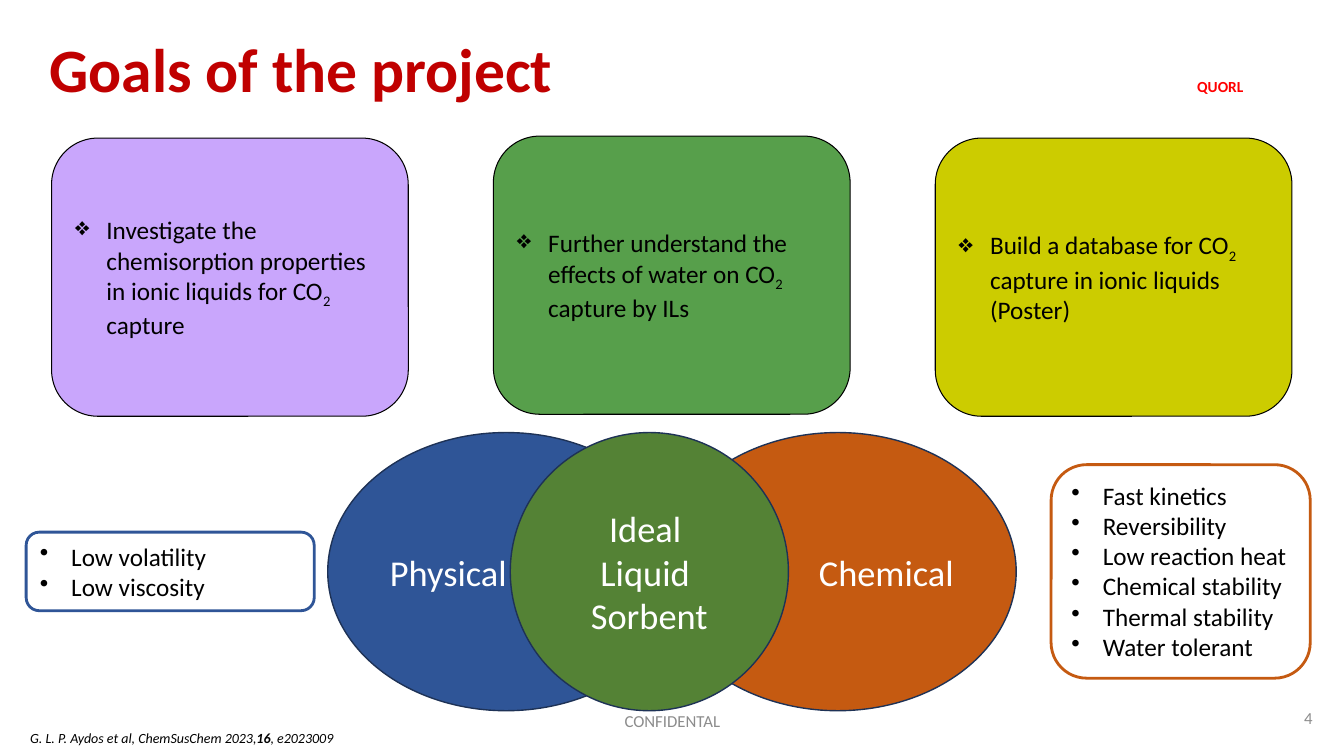
from dataclasses import dataclass

import lxml.etree
import pptx
import pptx.dml.color
import pptx.enum.shapes
import pptx.enum.text
import pptx.oxml.ns
import pptx.util

Cm = pptx.util.Cm
SHAPE = pptx.enum.shapes.MSO_SHAPE
ALIGN = pptx.enum.text.PP_ALIGN
ANCHOR = pptx.enum.text.MSO_ANCHOR


@dataclass(frozen=True)
class Theme:
    font: str = "Calibri"
    black: str = "000000"
    white: str = "FFFFFF"
    grey: str = "8C8C8C"
    title_red: str = "C00000"
    tag_red: str = "FF0000"
    blue: str = "2F5597"
    orange: str = "C55A11"
    green: str = "548235"
    navy: str = "1E3256"
    cards: tuple = ("C9A6FC", "579F4B", "CCCC00")
    title_size: int = 44
    venn_size: int = 26
    body_size: int = 18
    footer_size: int = 12
    tag_size: int = 11
    citation_size: int = 10


THEME = Theme()

GOALS = [
    ("Investigate the chemisorption properties in ionic liquids for CO", "capture"),
    ("Further understand the effects of water on CO", "capture by ILs"),
    ("Build a database for CO", "capture in ionic liquids (Poster)"),
]
PHYSICAL_TRAITS = ["Low volatility", "Low viscosity"]
CHEMICAL_TRAITS = ["Fast kinetics", "Reversibility", "Low reaction heat",
                   "Chemical stability", "Thermal stability", "Water tolerant"]


def rgb(code):
    return pptx.dml.color.RGBColor.from_string(code)


def style(para, size, color, align=ALIGN.LEFT, bold=False, italic=False):
    para.alignment = align
    para.font.name = THEME.font
    para.font.size = pptx.util.Pt(size)
    para.font.bold = bold
    para.font.italic = italic
    para.font.color.rgb = rgb(color)


def add_bullet(para, symbol):
    props = para._p.get_or_add_pPr()
    props.set("marL", str(Cm(0.79)))
    props.set("indent", str(Cm(-0.79)))
    bullet = lxml.etree.SubElement(props, pptx.oxml.ns.qn("a:buChar"))
    bullet.set("char", symbol)


def add_paragraphs(frame, lines):
    """Write each line in its own paragraph and return the paragraphs."""
    frame.text = "\n".join(lines)
    return frame.paragraphs


def add_panel(page, kind, box, line, width, fill=None, anchor=ANCHOR.MIDDLE):
    shape = page.shapes.add_shape(kind, *map(Cm, box))
    shape.shadow.inherit = False
    if fill:
        shape.fill.solid()
        shape.fill.fore_color.rgb = rgb(fill)
    else:
        shape.fill.background()
    shape.line.color.rgb = rgb(line)
    shape.line.width = pptx.util.Pt(width)
    shape.text_frame.word_wrap = True
    shape.text_frame.vertical_anchor = anchor
    return shape.text_frame


def add_label(page, box, text, size, color, anchor=ANCHOR.TOP, **look):
    frame = page.shapes.add_textbox(*map(Cm, box)).text_frame
    frame.word_wrap = True
    frame.vertical_anchor = anchor
    para = frame.paragraphs[0]
    para.text = text
    style(para, size, color, **look)
    return para


def add_title(page, box):
    title = page.shapes.title
    title.left, title.top, title.width, title.height = map(Cm, box)
    frame = title.text_frame
    frame.text = "Goals of the project"
    frame.auto_size = pptx.enum.text.MSO_AUTO_SIZE.NONE
    frame.vertical_anchor = ANCHOR.MIDDLE
    para = frame.paragraphs[0]
    para.line_spacing = 0.9
    style(para, THEME.title_size, THEME.title_red, bold=True)


def add_goal_cards(page, box):
    left, top, width, height = box
    card_width = 8.99
    pitch = (width - card_width) / (len(GOALS) - 1)
    for index, ((before, after), fill) in enumerate(zip(GOALS, THEME.cards)):
        rise = 0.05 if index == 1 else 0
        card = (left + index * pitch, top - rise, card_width, height)
        frame = add_panel(page, SHAPE.ROUNDED_RECTANGLE, card, THEME.black, 0.75, fill)
        para = frame.paragraphs[0]
        add_bullet(para, "❖")
        style(para, THEME.body_size, THEME.black)
        for text in (before, "2 ", after):
            span = para.add_run()
            span.text = text
            if text == "2 ":
                span._r.get_or_add_rPr().set("baseline", "-25000")


def add_venn(page, box):
    left, top, width, height = box
    oval = 8.99
    # Back to front: the two sides, then the circle over their overlap
    parts = [
        (left + width - oval, oval, THEME.orange, ["Chemical"], ALIGN.RIGHT),
        (left, oval, THEME.blue, ["Physical"], ALIGN.LEFT),
        (left + 4.6, height, THEME.green, ["Ideal ", "Liquid ", "Sorbent"], ALIGN.CENTER),
    ]
    for x, part_width, fill, lines, align in parts:
        frame = add_panel(page, SHAPE.OVAL, (x, top, part_width, height),
                          THEME.navy, 1, fill)
        for para in add_paragraphs(frame, lines):
            style(para, THEME.venn_size, THEME.white, align)


def add_trait_list(page, box, line, traits):
    frame = add_panel(page, SHAPE.ROUNDED_RECTANGLE, box, line, 2, anchor=ANCHOR.TOP)
    for para in add_paragraphs(frame, traits):
        add_bullet(para, "•")
        style(para, THEME.body_size, THEME.black)


def add_footer(page, box):
    left, top, width, height = box
    add_label(page, (left + 10.72, top + 0.07, 11.43, 1.02), "CONFIDENTAL",
              THEME.footer_size, THEME.grey, ANCHOR.MIDDLE, align=ALIGN.CENTER)
    add_label(page, (left + width - 1.3, top, 1.3, 1.02), "4",
              THEME.footer_size, THEME.grey, ANCHOR.MIDDLE, align=ALIGN.RIGHT)
    citation = add_label(page, (left, top + height - 0.71, 32, 0.71),
                         "G. L. P. Aydos et al, ChemSusChem 2023,",
                         THEME.citation_size, THEME.black, italic=True)
    volume = citation.add_run()
    volume.text = "16"
    volume.font.bold = True
    citation.add_run().text = ", e2023009"


def build_goals_page(deck):
    page = deck.slides.add_slide(deck.slide_layouts[5])
    # Heading
    add_title(page, (0.99, 0.33, 32, 3))
    add_label(page, (29.92, 1.83, 1.88, 0.74), "QUORL",
              THEME.tag_size, THEME.tag_red, bold=True)
    # Sorbent properties
    add_trait_list(page, (26.49, 11.71, 6.53, 5.38), THEME.orange, CHEMICAL_TRAITS)
    add_trait_list(page, (0.66, 13.41, 7.26, 1.98), THEME.blue, PHYSICAL_TRAITS)
    add_venn(page, (8.26, 10.9, 17.35, 7.01))
    # Project goals
    add_goal_cards(page, (1.3, 3.48, 31.26, 7.01))
    # Footer
    add_footer(page, (0.51, 17.58, 32.82, 1.39))


def main():
    deck = pptx.Presentation()
    deck.slide_width = Cm(33.87)
    deck.slide_height = Cm(19.05)
    build_goals_page(deck)
    deck.save("out.pptx")


if __name__ == "__main__":
    main()
